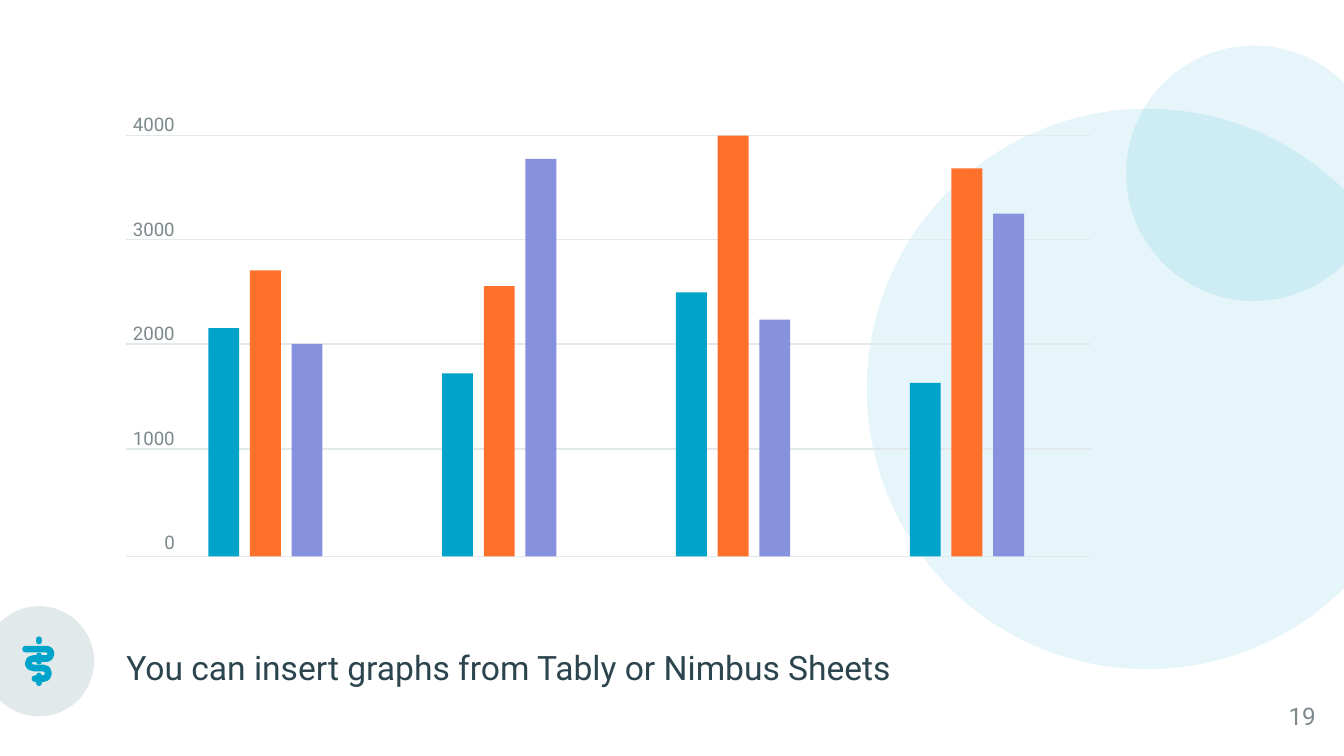
from lxml.etree import SubElement
from pptx import Presentation
from pptx.dml.color import RGBColor as RGB
from pptx.enum.shapes import MSO_CONNECTOR as Conn, MSO_SHAPE as Form
from pptx.enum.text import MSO_ANCHOR as Anchor, PP_ALIGN as Align
from pptx.oxml.ns import qn
from pptx.util import Inches as In, Pt

# Content
CAPTION = "You can insert graphs from Tably or Nimbus Sheets"
PAGE = "19"
TICKS = [4000, 3000, 2000, 1000, 0]
GROUPS = [(2170, 2720, 2020), (1740, 2570, 3780),
          (2510, 4000, 2250), (1650, 3690, 3260)]
# Icon strokes: points in hundredths of an inch
KNOB = [[(29, 476), (29, 477)]]
SNAKE = [
    [(19, 483), (35, 483), (37, 484), (38, 486), (37, 489), (35, 490),
     (25, 490), (22, 491), (21, 494), (22, 496), (25, 497), (32, 497),
     (35, 498), (36, 501), (35, 504), (32, 505), (26, 505)],
    [(29, 488), (29, 492)],
    [(29, 503), (29, 508)],
]

THEME = {
    "font": "Roboto", "ink": "2C444E", "muted": "7D8A8D", "pale": "E1E9EB",
    "brand": "00A4CA", "bars": ["00A4CA", "FF712A", "8792DF"],
    "caption": 18, "page": 13, "tick": 10, "rule": 0.75, "stroke": 3.6,
}

# Layout in inches
WIDE = 10
HIGH = WIDE * 9 / 16
LEFT, RIGHT, TOP, BASE = 0.94, 8.12, 1.01, 4.14
RULES = [TOP, 1.78, 2.56, 3.34, BASE]
FIRST, GROUP, STEP, BAR = 1.55, 1.74, 0.31, 0.23

deck = Presentation()
deck.slide_width, deck.slide_height = In(WIDE), In(HIGH)
slide = deck.slides.add_slide(deck.slide_layouts[6])
shapes = slide.shapes


def block(form, x, y, w, h, color):
    """Draw a flat filled shape and return it."""
    shape = shapes.add_shape(form, In(x), In(y), In(w), In(h))
    shape.shadow.inherit = False
    shape.fill.solid()
    shape.fill.fore_color.rgb = RGB.from_string(color)
    shape.line.fill.background()
    return shape


def disc(x, y, size, color, alpha=100, turn=0):
    """Draw a disc cut by the slide edge; alpha is its opacity in percent."""
    shape = block(Form.CHORD, x, y, size, size, color)
    shape.adjustments[0], shape.adjustments[1] = 27, 189
    shape.rotation = turn
    if alpha < 100:
        tint = shape.fill._xPr.find(".//" + qn("a:srgbClr"))
        SubElement(tint, qn("a:alpha"), val=str(alpha * 1000))


def text(x, y, w, h, lines, size, color, align=Align.LEFT,
         anchor=Anchor.TOP, lead=None, gap=0):
    """Write one paragraph per line, with gap points between them."""
    frame = shapes.add_textbox(In(x), In(y), In(w), In(h)).text_frame
    frame.margin_left = frame.margin_right = 0
    frame.margin_top = frame.margin_bottom = 0
    frame.word_wrap = True
    frame.vertical_anchor = anchor
    frame.text = "\n".join(lines)
    for i, para in enumerate(frame.paragraphs):
        para.alignment = align
        para.line_spacing = lead
        para.space_before = Pt(gap if i else 0)
        para.font.name, para.font.size = THEME["font"], Pt(size)
        para.font.color.rgb = RGB.from_string(color)


def rule(y):
    line = shapes.add_connector(Conn.STRAIGHT, In(LEFT), In(y), In(RIGHT), In(y))
    line.line.color.rgb = RGB.from_string(THEME["pale"])
    line.line.width = Pt(THEME["rule"])
    SubElement(line._element.spPr, qn("a:effectLst"))


def stroke(lines):
    """Draw open round-capped lines as one shape."""
    pen = shapes.build_freeform(*lines[0][0], scale=In(0.01))
    for i, points in enumerate(lines):
        if i:
            pen.move_to(*points[0])
        pen.add_line_segments(points[1:], close=False)
    shape = pen.convert_to_shape()
    shape.shadow.inherit = False
    shape.fill.background()
    shape.line.color.rgb = RGB.from_string(THEME["brand"])
    shape.line.width = Pt(THEME["stroke"])
    ln = shape.line._get_or_add_ln()
    ln.set("cap", "rnd")
    SubElement(ln, qn("a:round"))


# Backdrop and icon
disc(6.45, 0.81, 4.17, THEME["brand"], alpha=10)
disc(8.38, 0.34, 1.9, THEME["brand"], alpha=10)
disc(-0.12, 4.51, 0.82, THEME["pale"], turn=180)
stroke(KNOB)
stroke(SNAKE)

# Caption and page number
text(LEFT, 4.77, 8.13, 0.31, [CAPTION], THEME["caption"], THEME["ink"], lead=1.15)
text(9.41, 5.17, 0.38, 0.31, [PAGE], THEME["page"], THEME["muted"],
     Align.RIGHT, Anchor.MIDDLE)

# Graph
for y in RULES:
    rule(y)
text(LEFT, 0.84, 0.36, 3.31, [str(t) for t in TICKS], THEME["tick"],
     THEME["muted"], Align.RIGHT, gap=44)
for g, group in enumerate(GROUPS):
    for b, (value, color) in enumerate(zip(group, THEME["bars"])):
        tall = (BASE - TOP) * value / TICKS[0]
        block(Form.RECTANGLE, FIRST + g * GROUP + b * STEP, BASE - tall,
              BAR, tall, color)

deck.save("out.pptx")
